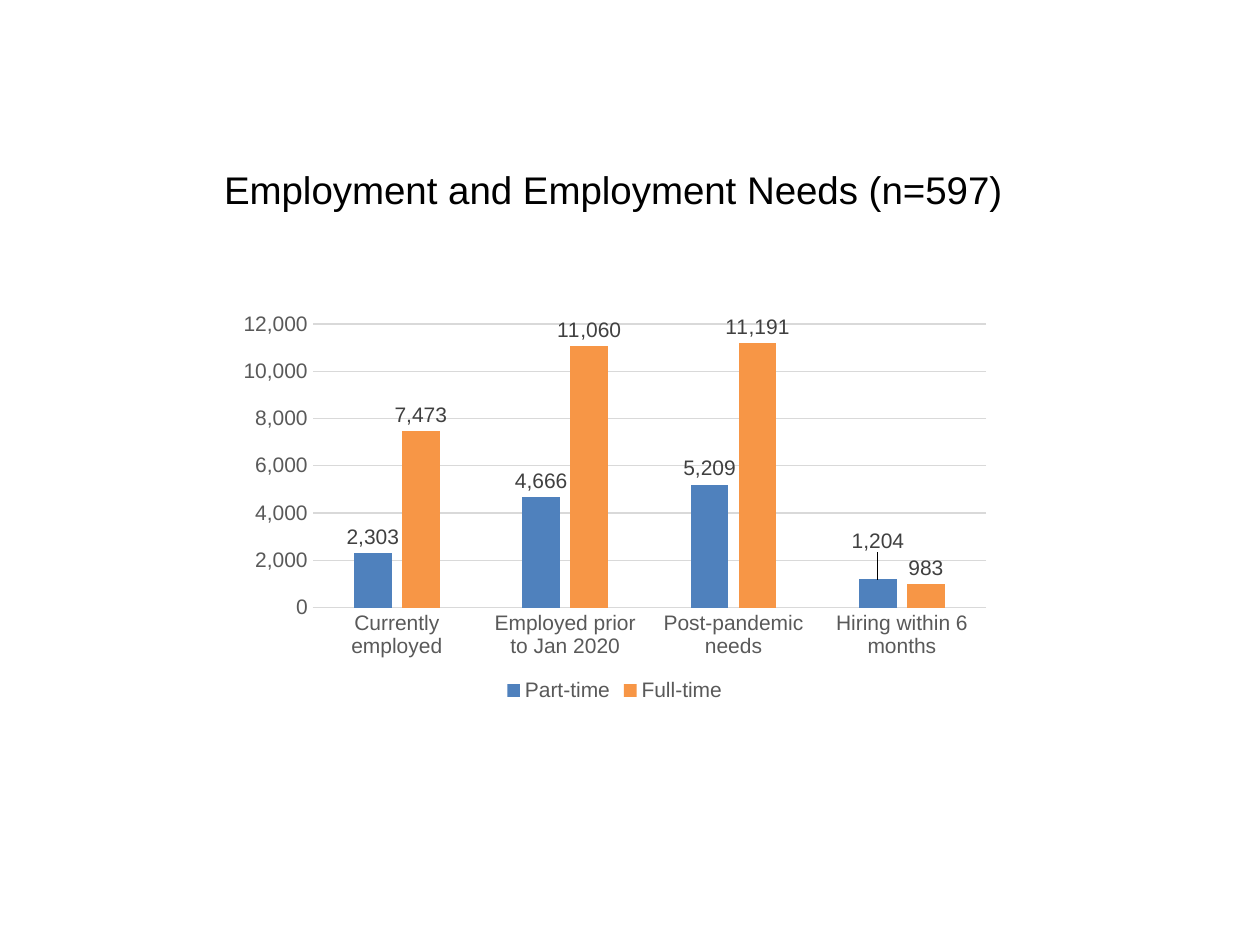
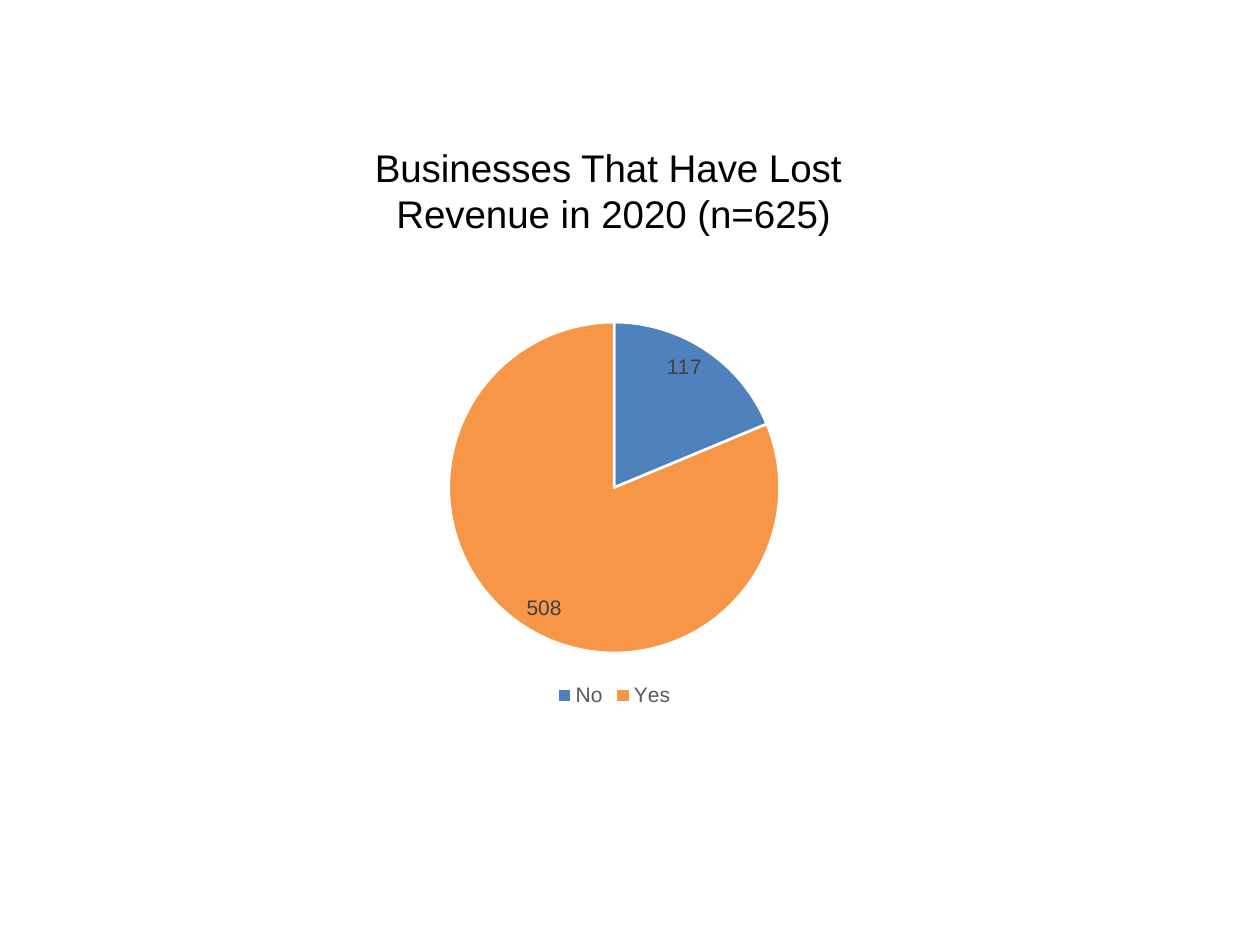
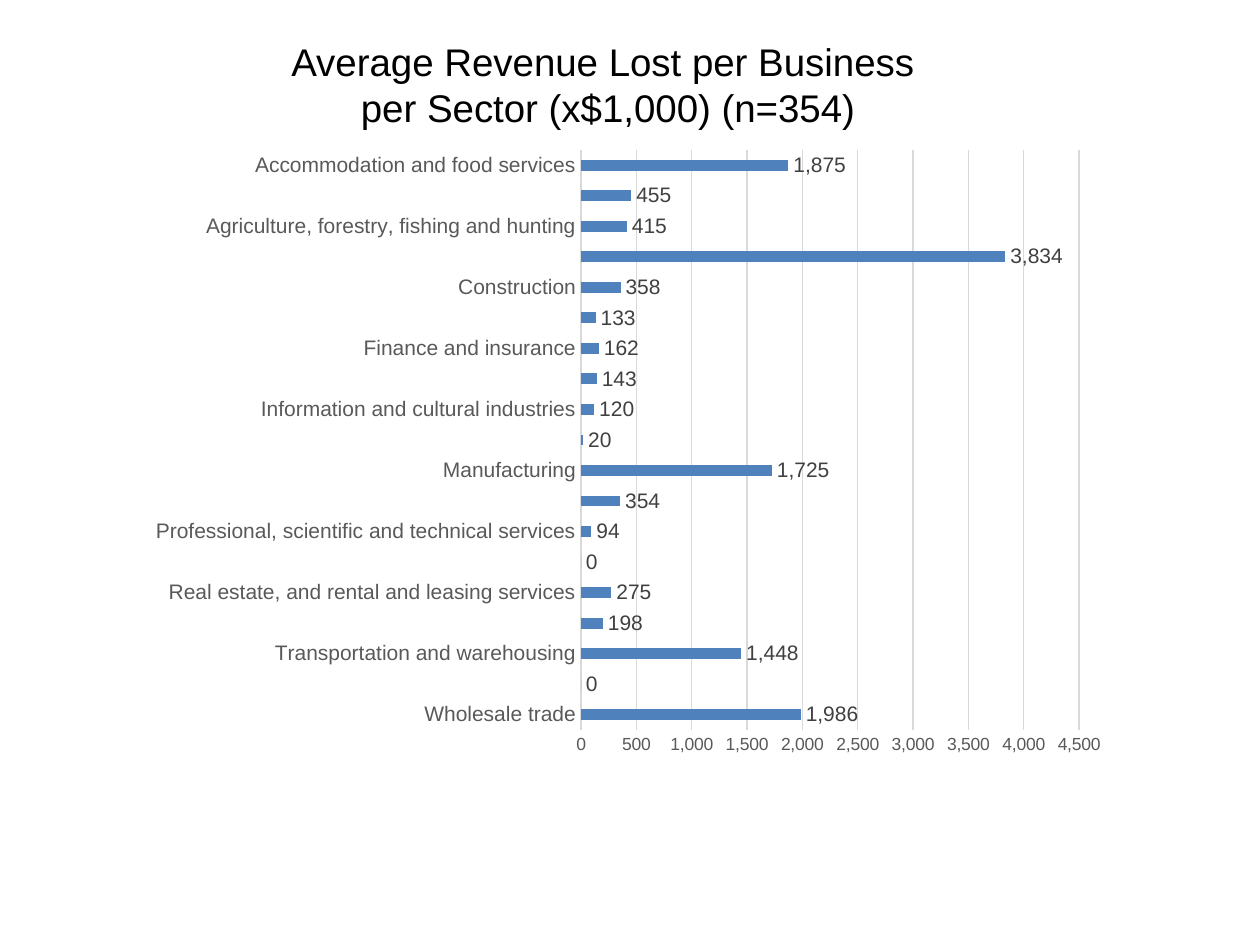
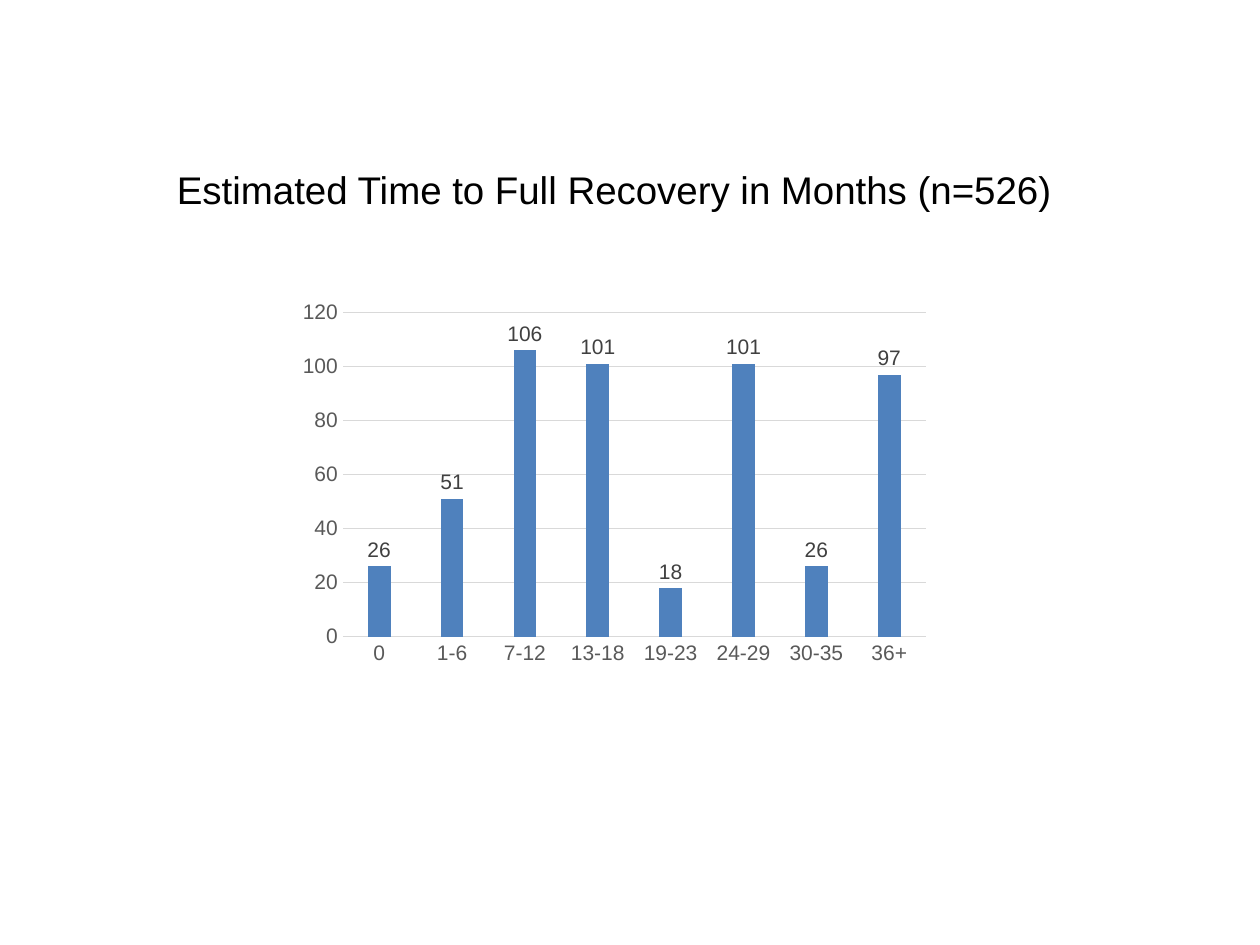
from dataclasses import dataclass

from pptx import Presentation
from pptx.chart.data import CategoryChartData
from pptx.dml.color import RGBColor as RGB
from pptx.enum.chart import XL_CHART_TYPE as CT
from pptx.enum.chart import XL_LABEL_POSITION as LabelPos
from pptx.enum.chart import XL_LEGEND_POSITION as LegendPos
from pptx.enum.chart import XL_TICK_MARK as Tick
from pptx.enum.text import MSO_ANCHOR, MSO_AUTO_SIZE, PP_ALIGN
from pptx.oxml import parse_xml
from pptx.oxml.ns import nsdecls
from pptx.util import Pt


@dataclass(frozen=True)
class Theme:
    font: str = "Arial"
    title_size: int = 22
    chart_size: int = 12
    scale_size: int = 10
    black: RGB = RGB(0, 0, 0)
    white: RGB = RGB(255, 255, 255)
    axis_text: RGB = RGB(0x59, 0x59, 0x59)
    label_text: RGB = RGB(0x40, 0x40, 0x40)
    grid: RGB = RGB(0xD9, 0xD9, 0xD9)
    fills: tuple = (RGB(0x4F, 0x81, 0xBD), RGB(0xF7, 0x96, 0x46))


T = Theme()


def set_font(font, size, color):
    font.name, font.size, font.bold = T.font, Pt(size), False
    font.color.rgb = color


# Slide contents: boxes are (left, top, width, height) in points
SLIDES = [
    dict(title="Employment and Employment Needs (n=597)",
         title_box=(118, 91.5, 465, 33.5), chart_box=(130.3, 174.2, 442, 229.7),
         kind=CT.COLUMN_CLUSTERED, gap=219, overlap=-27, fmt="#,##0", legend=True,
         cats=["Currently employed", "Employed prior to Jan 2020",
               "Post-pandemic needs", "Hiring within 6 months"],
         series={"Part-time": [2303, 4666, 5209, 1204],
                 "Full-time": [7473, 11060, 11191, 983]},
         raised_label=3),
    dict(title="Businesses That Have Lost \nRevenue in 2020 (n=625)",
         title_box=(205.2, 78.5, 291, 60.5), chart_box=(200.9, 174.2, 300.2, 232.6),
         kind=CT.PIE, legend=True, cats=["No", "Yes"],
         series={"Series 1": [117, 508]}),
    dict(title="Average Revenue Lost per Business \nper Sector (x$1,000) (n=354)",
         title_box=(157, 18, 381, 60.5), chart_box=(77.8, 78.5, 562.3, 360),
         kind=CT.BAR_CLUSTERED, gap=182, fmt="#,##0", scale_size=T.scale_size,
         cats=["Wholesale trade", "Utilities", "Transportation and warehousing",
               "Retail trade", "Real estate, and rental and leasing services",
               "Public administration",
               "Professional, scientific and technical services",
               "Other services (except public administration)", "Manufacturing",
               "Management of companies and enterprises",
               "Information and cultural industries",
               "Health care and social assistance", "Finance and insurance",
               "Educational services", "Construction",
               "Arts, entertainment and recreation",
               "Agriculture, forestry, fishing and hunting",
               "Admin/support, waste management , remediation",
               "Accommodation and food services"],
         series={"Series 1": [1986, 0, 1448, 198, 275, 0, 94, 354, 1725, 20, 120,
                              143, 162, 133, 358, 3834, 415, 455, 1875]}),
    dict(title="Estimated Time to Full Recovery in Months (n=526)",
         title_box=(90.7, 91.5, 520.6, 33.5), chart_box=(165.6, 167.8, 370.8, 216),
         kind=CT.COLUMN_CLUSTERED, gap=219, overlap=-27,
         cats=["0", "1-6", "7-12", "13-18", "19-23", "24-29", "30-35", "36+"],
         series={"Series 1": [26, 51, 106, 101, 18, 101, 26, 97]}),
]

prs = Presentation()
prs.slide_width, prs.slide_height = Pt(720), Pt(540)

for d in SLIDES:
    s = prs.slides.add_slide(prs.slide_layouts[6])
    s.background.fill.solid()
    s.background.fill.fore_color.rgb = T.white
    is_pie = d["kind"] == CT.PIE
    fmt = d.get("fmt", "General")

    # Title
    tf = s.shapes.add_textbox(*map(Pt, d["title_box"])).text_frame
    tf.word_wrap = False
    tf.auto_size = MSO_AUTO_SIZE.SHAPE_TO_FIT_TEXT
    tf.vertical_anchor = MSO_ANCHOR.MIDDLE
    p = tf.paragraphs[0]
    p.text = d["title"]
    p.alignment = PP_ALIGN.CENTER
    set_font(p.font, T.title_size, T.black)

    # Chart and legend
    data = CategoryChartData(number_format=fmt)
    data.categories = d["cats"]
    for name, values in d["series"].items():
        data.add_series(name, values)
    chart = s.shapes.add_chart(d["kind"], *map(Pt, d["chart_box"]), data).chart
    set_font(chart.font, T.chart_size, T.black)
    chart.has_title = False
    chart.has_legend = d.get("legend", False)
    if chart.has_legend:
        chart.legend.position = LegendPos.BOTTOM
        chart.legend.include_in_layout = False
        set_font(chart.legend.font, T.chart_size, T.axis_text)
    plot = chart.plots[0]
    plot.vary_by_categories = is_pie

    # Axes
    if not is_pie:
        plot.gap_width, plot.overlap = d["gap"], d.get("overlap", 0)
        cat, val = chart.category_axis, chart.value_axis
        for axis in (cat, val):
            axis.major_tick_mark = axis.minor_tick_mark = Tick.NONE
        set_font(cat.tick_labels.font, T.chart_size, T.axis_text)
        set_font(val.tick_labels.font, d.get("scale_size", T.chart_size), T.axis_text)
        val.tick_labels.number_format = fmt
        val.tick_labels.number_format_is_linked = False
        val.format.line.fill.background()
        for line in (cat.format.line, val.major_gridlines.format.line):
            line.color.rgb, line.width = T.grid, Pt(0.75)

    # Series colours and value labels
    position = LabelPos.INSIDE_END if is_pie else LabelPos.OUTSIDE_END
    for series, color in zip(plot.series, T.fills):
        if is_pie:
            for i, slice_color in enumerate(T.fills):
                fmt_slice = series.points[i].format
                fmt_slice.fill.solid()
                fmt_slice.fill.fore_color.rgb = slice_color
                fmt_slice.line.color.rgb, fmt_slice.line.width = T.white, Pt(1.5)
        else:
            series.format.fill.solid()
            series.format.fill.fore_color.rgb = color
            series.invert_if_negative = False
        labels = series.data_labels
        labels.show_value = True
        labels.number_format, labels.number_format_is_linked = fmt, False
        labels.position = position
        set_font(labels.font, T.chart_size, T.label_text)

    # One label is lifted clear of its neighbour
    if "raised_label" in d:
        series = plot.series[0]
        label = series.points[d["raised_label"]].data_label
        set_font(label.font, T.chart_size, T.label_text)
        label.position = position
        idx = series.data_labels._element.find("{*}dLbl/{*}idx")
        idx.addnext(parse_xml(
            f'<c:layout {nsdecls("c")}><c:manualLayout>'
            '<c:x val="0"/><c:y val="-0.055"/></c:manualLayout></c:layout>'))

prs.save("out.pptx")
